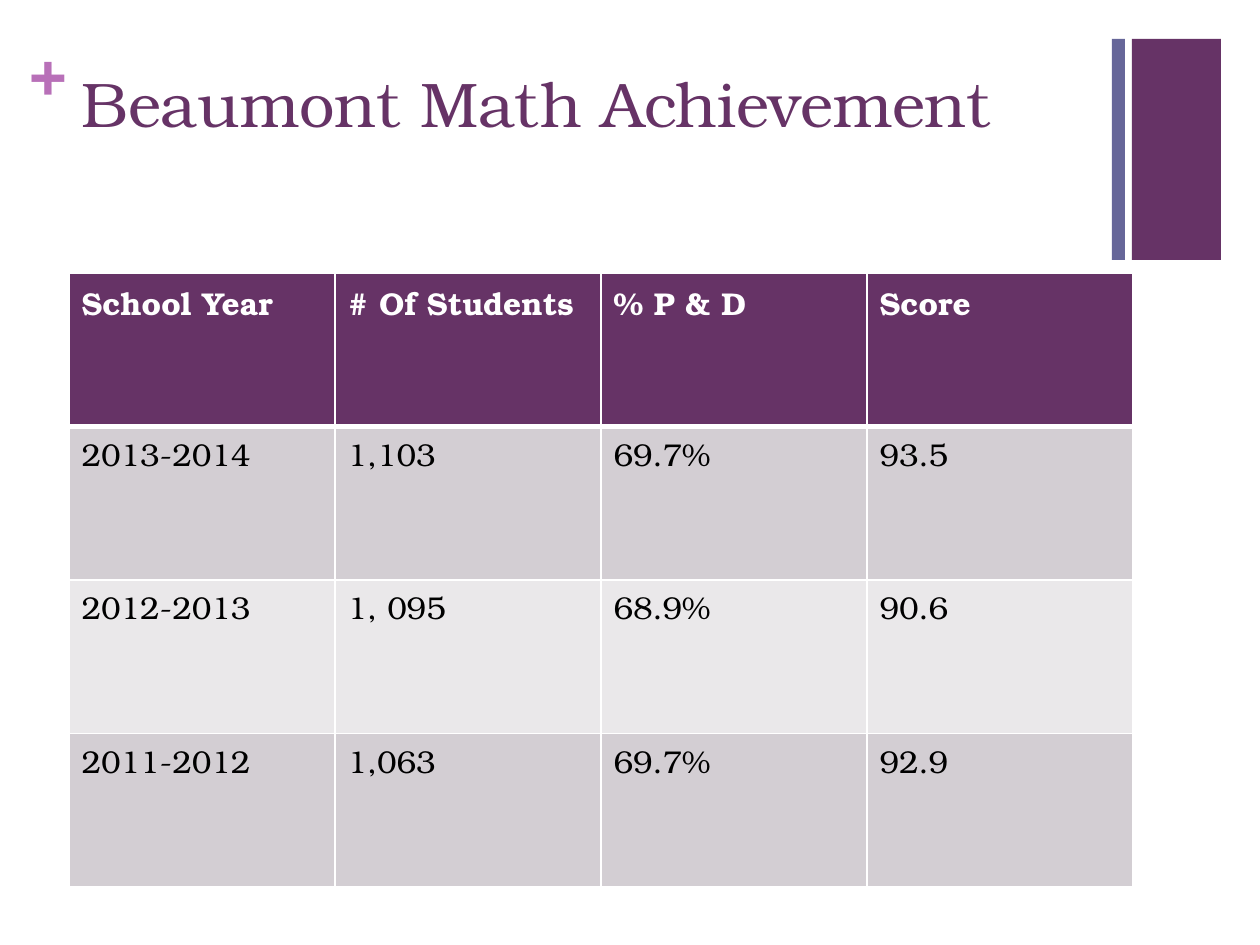
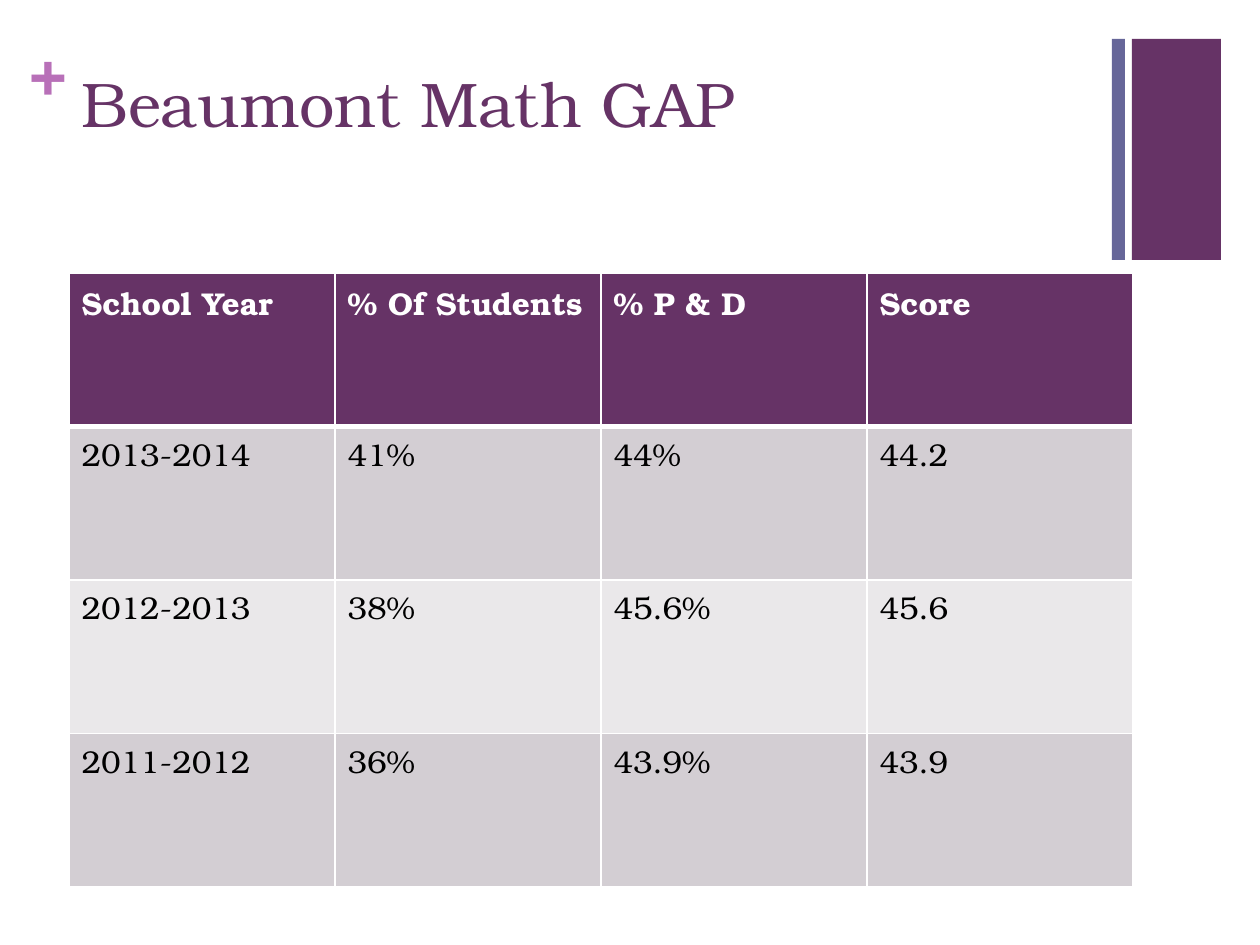
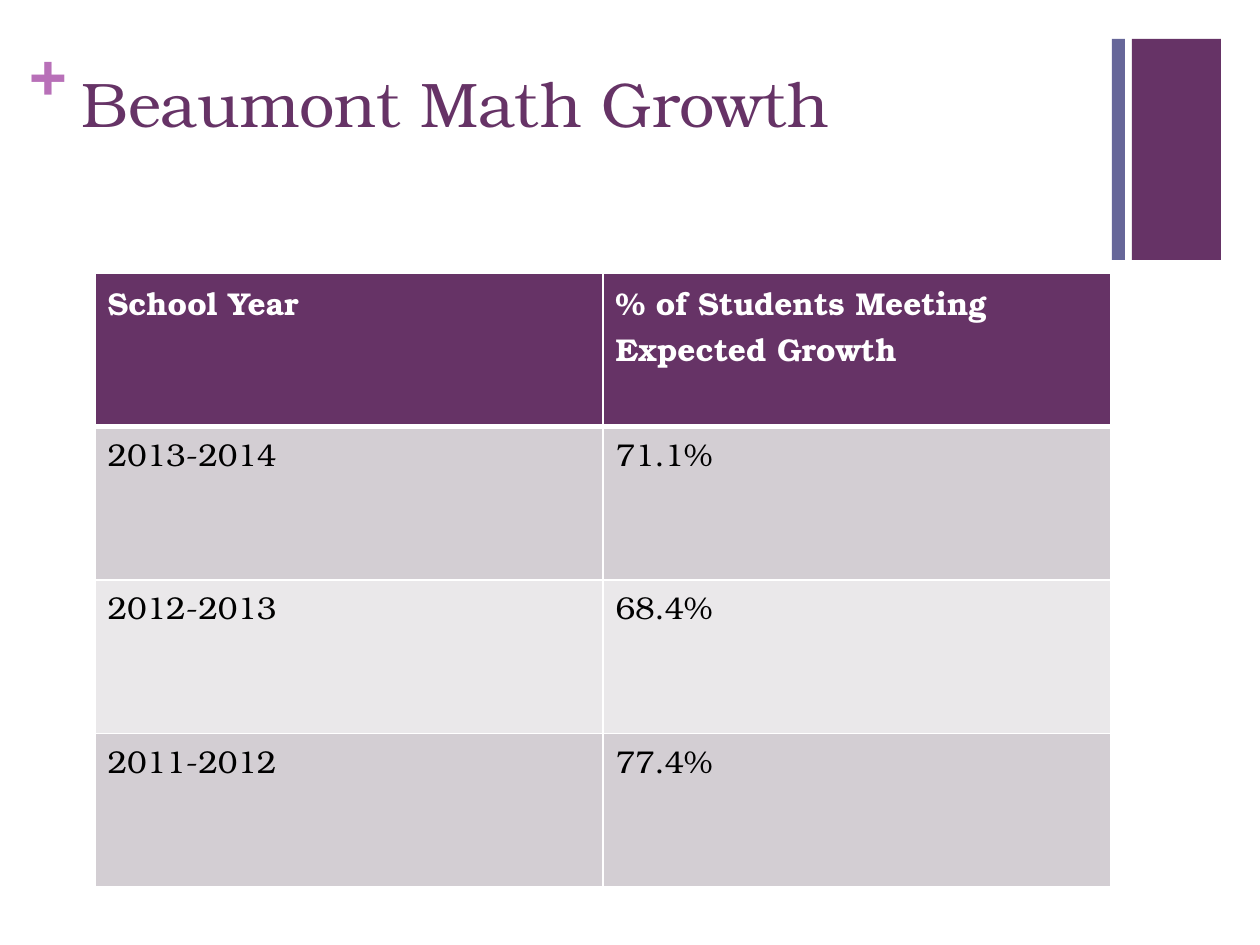
from dataclasses import dataclass

from lxml import etree
from pptx import Presentation
from pptx import util as u
from pptx.dml.color import RGBColor
from pptx.enum import shapes, text
from pptx.oxml.ns import qn


@dataclass(frozen=True)
class Theme:
    font: str = "TeX Gyre Bonum"
    plum: str = "663366"
    slate: str = "666699"
    orchid: str = "B870B8"
    white: str = "FFFFFF"
    black: str = "000000"
    bands: tuple = ("D3CED3", "EAE8EA")
    head: int = 36
    cell: int = 18
    thin: int = 1
    thick: int = 3


T = Theme()
YEARS = ("2013-2014", "2012-2013", "2011-2012")

# Boxes in px: left, top, width, height
PAGE = (1260, 945)
DECK = (30, 32, 1191, 228)
TITLE = (69, 67, 1041, 154)
WIDE = (69, 273, 1064, 614)
SLIM = (95, 273, 1016, 614)


def emu(px):
    return u.Emu(round(px * 914400 / 126))


def place(box):
    return [emu(px) for px in box]


def write(frame, words, size, color, bold=False):
    para = frame.paragraphs[0]
    run = para.add_run()
    run.text = words
    font = run.font
    font.name, font.size, font.bold = T.font, u.Pt(size), bold
    font.color.rgb = RGBColor.from_string(color)
    return para


def bar(slide, box, color):
    shape = slide.shapes.add_shape(shapes.MSO_SHAPE.RECTANGLE, *place(box))
    shape.shadow.inherit = False
    shape.fill.solid()
    shape.fill.fore_color.rgb = RGBColor.from_string(color)
    shape.line.fill.background()
    return shape


def plus(slide, box):
    shape = slide.shapes.add_textbox(*place(box))
    frame = shape.text_frame
    frame.margin_left = frame.margin_right = 0
    frame.margin_top = frame.margin_bottom = 0
    frame.word_wrap = True
    write(frame, "+", T.head, T.orchid, True)
    return shape


def dress(slide, box):
    """Draw the shared marks and move them to the slide's layout."""
    left, top, width, _ = box
    right = left + width
    marks = (
        bar(slide, (right - 89, top + 7, 89, 221), T.plum),
        plus(slide, (left, top, 37, 77)),
        bar(slide, (right - 109, top + 7, 13, 221), T.slate),
    )
    for mark in marks:
        slide.slide_layout.shapes.element.append(mark.element)


def title(slide, box, words):
    shape = slide.shapes.title
    shape.left, shape.top, shape.width, shape.height = place(box)
    frame = shape.text_frame
    frame.auto_size = text.MSO_AUTO_SIZE.NONE
    frame.vertical_anchor = text.MSO_ANCHOR.TOP
    para = write(frame, words, T.head, T.plum)
    para.alignment = text.PP_ALIGN.LEFT
    para.line_spacing = 0.9


def edge(cell, above, below):
    """Rule the four sides of a cell; borders come before its fill."""
    sides = {"L": T.thin, "R": T.thin, "T": above, "B": below}
    props = cell._tc.get_or_add_tcPr()
    for spot, (side, width) in enumerate(sides.items()):
        line = etree.Element(qn("a:ln" + side), w=str(u.Pt(width)))
        fill = etree.SubElement(line, qn("a:solidFill"))
        etree.SubElement(fill, qn("a:srgbClr"), val=T.white)
        props.insert(spot, line)


def grid(slide, box, rows):
    deep, wide = len(rows), len(rows[0])
    table = slide.shapes.add_table(deep, wide, *place(box)).table
    table.horz_banding = False
    for col in table.columns:
        col.width = emu(box[2] / wide)
    for r, row in enumerate(rows):
        table.rows[r].height = emu(box[3] / deep)
        top = r == 0
        shade = T.plum if top else T.bands[(r - 1) % 2]
        for c, words in enumerate(row):
            cell = table.cell(r, c)
            cell.fill.solid()
            cell.fill.fore_color.rgb = RGBColor.from_string(shade)
            edge(cell, T.thick if r == 1 else T.thin, T.thick if top else T.thin)
            write(cell.text_frame, words, T.cell, T.white if top else T.black, top)


# Title, table box, headings after the year, values by year
PAGES = (
    ("Beaumont Math Achievement", WIDE,
     ("# Of Students", "% P & D", "Score"),
     (("1,103", "69.7%", "93.5"),
      ("1, 095", "68.9%", "90.6"),
      ("1,063", "69.7%", "92.9"))),
    ("Beaumont Math GAP", WIDE,
     ("% Of Students", "% P & D", "Score"),
     (("41%", "44%", "44.2"),
      ("38%", "45.6%", "45.6"),
      ("36%", "43.9%", "43.9"))),
    ("Beaumont Math Growth", SLIM,
     ("% of Students Meeting Expected Growth",),
     (("71.1%",), ("68.4%",), ("77.4%",))),
)


def main():
    deck = Presentation()
    deck.slide_width, deck.slide_height = place(PAGE)
    for words, box, heads, values in PAGES:
        slide = deck.slides.add_slide(deck.slide_layouts[5])
        if len(deck.slides) == 1:
            dress(slide, DECK)
        title(slide, TITLE, words)
        rows = [("School Year", *heads)]
        rows += [(year, *row) for year, row in zip(YEARS, values)]
        grid(slide, box, rows)
    deck.save("out.pptx")


if __name__ == "__main__":
    main()
